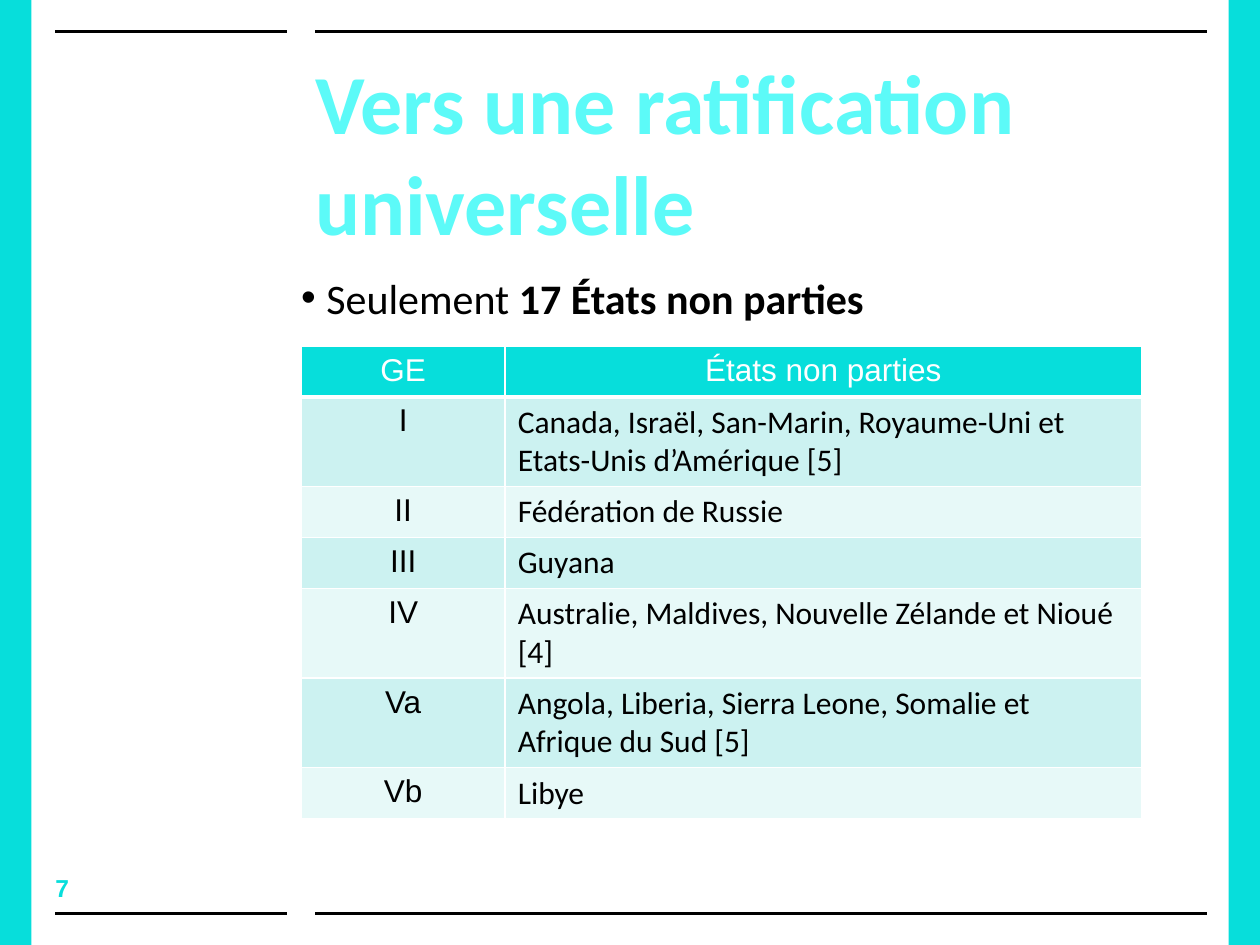
from lxml import etree
from pptx import Presentation
from pptx import util as u
from pptx.dml.color import RGBColor
from pptx.enum import shapes, text
from pptx.oxml import ns

COLS, ROWS = 40, 30  # quarter-inch grid
COLORS = {
    "band": "07DEDB", "title": "5CFAF8", "ink": "000000", "white": "FFFFFF",
    "odd": "CCF2F1", "even": "E7F9F8",
}
STATES = [
    ("I", "Canada, Israël, San-Marin, Royaume-Uni et Etats-Unis d’Amérique [5]"),
    ("II", "Fédération de Russie"),
    ("III", "Guyana"),
    ("IV", "Australie, Maldives, Nouvelle Zélande et Nioué [4]"),
    ("Va", "Angola, Liberia, Sierra Leone, Somalie et Afrique du Sud [5]"),
    ("Vb", "Libye"),
]


def rgb(name):
    return RGBColor.from_string(COLORS[name])


def sub(parent, tag, **attrs):
    return etree.SubElement(parent, ns.qn(tag), attrs)


class Deck:
    def __init__(self):
        self.prs = prs = Presentation()
        prs.slide_width, prs.slide_height = u.Inches(10), u.Inches(7.5)
        self.s = prs.slides.add_slide(prs.slide_layouts[5])

    def x(self, cols):
        return round(self.prs.slide_width * cols / COLS)

    def y(self, rows):
        return round(self.prs.slide_height * rows / ROWS)

    def box(self, left, top, width, height):
        return self.x(left), self.y(top), self.x(width), self.y(height)

    def add_runs(self, p, runs, color, name="Calibri", size=18):
        """Add (text, bold) runs to a paragraph."""
        for words, bold in runs:
            r = p.add_run()
            r.text = words
            for key, value in dict(name=name, size=u.Pt(size), bold=bold).items():
                setattr(r.font, key, value)
            r.font.color.rgb = rgb(color)

    def frame(self, sp):
        """Clear the insets of a text shape and return its first paragraph."""
        tf = sp.text_frame
        settings = dict(margin_left=0, margin_top=0, margin_right=0, margin_bottom=0,
                        word_wrap=True, auto_size=text.MSO_AUTO_SIZE.NONE,
                        vertical_anchor=text.MSO_ANCHOR.TOP)
        for key, value in settings.items():
            setattr(tf, key, value)
        tf.paragraphs[0].alignment = text.PP_ALIGN.LEFT
        return tf.paragraphs[0]

    def band(self, *place):
        sp = self.s.shapes.add_shape(shapes.MSO_SHAPE.RECTANGLE, *self.box(*place))
        sp.shadow.inherit = False
        sp.fill.solid()
        sp.fill.fore_color.rgb = rgb("band")
        sp.line.fill.background()

    def rule(self, start, end, row):
        line = self.s.shapes.add_connector(
            shapes.MSO_CONNECTOR.STRAIGHT,
            self.x(start), self.y(row), self.x(end), self.y(row))
        line.line.width = u.Pt(2)
        line.line.color.rgb = rgb("ink")
        sub(line._element.spPr, "a:effectLst")

    def title(self, words, *place):
        sp = self.s.shapes.title
        sp.left, sp.top, sp.width, sp.height = self.box(*place)
        self.add_runs(self.frame(sp), [(words, True)], "title", size=48)

    def label(self, runs, *place, bullet=False, **style):
        p = self.frame(self.s.shapes.add_textbox(*self.box(*place)))
        if bullet:
            pPr = p._p.get_or_add_pPr()
            indent = u.Inches(0.2)
            pPr.set("marL", str(indent))
            pPr.set("indent", str(-indent))
            sub(pPr, "a:buFont", typeface="Arial")
            sub(pPr, "a:buChar", char="•")
        self.add_runs(p, runs, **style)

    def borders(self, cell, top, bottom):
        tcPr = cell._tc.get_or_add_tcPr()
        for side, points in dict(L=1, R=1, T=top, B=bottom).items():
            ln = sub(tcPr, f"a:ln{side}", w=str(u.Pt(points)))
            sub(sub(ln, "a:solidFill"), "a:srgbClr", val=COLORS["white"])

    def cell(self, cell, words, fill, color, centred, name, top=1, bottom=1):
        self.borders(cell, top, bottom)
        cell.fill.solid()
        cell.fill.fore_color.rgb = rgb(fill)
        p = cell.text_frame.paragraphs[0]
        p.alignment = text.PP_ALIGN.CENTER if centred else text.PP_ALIGN.LEFT
        self.add_runs(p, [(words, False)], color, name)

    def table(self, header, rows, widths, left, top):
        heights = [1.6] + [2.8 if len(states) > 40 else 1.62 for _, states in rows]
        table = self.s.shapes.add_table(
            len(heights), len(widths),
            *self.box(left, top, sum(widths), sum(heights))).table
        for column, width in zip(table.columns, widths):
            column.width = self.x(width)
        for row, height in zip(table.rows, heights):
            row.height = self.y(height)
        for c, words in enumerate(header):
            self.cell(table.cell(0, c), words, "band", "white", True, "Arial", bottom=3)
        for i, row in enumerate(rows, 1):
            for c, words in enumerate(row):
                self.cell(table.cell(i, c), words, "odd" if i % 2 else "even", "ink",
                          c == 0, "Calibri" if c else "Arial", top=3 if i == 1 else 1)


def main():
    deck = Deck()
    for left in (0, COLS - 1):
        deck.band(left, 0, 1, ROWS)
    for row in (1, ROWS - 1):
        deck.rule(1.76, 9.12, row)
        deck.rule(10, 38.32, row)
    deck.label([("7", True)], 1.76, 27.72, 4.56, 0.96,
               color="band", name="Arial", size=14)
    deck.title("Vers une ratification universelle", 10, 1.6, 28.32, 8.6)
    deck.label([("Seulement ", False), ("17 États non parties", True)],
               9.56, 8.64, 28.36, 1.6, bullet=True, color="ink", size=24)
    deck.table(("GE", "États non parties"), STATES, (6.48, 20.2), 9.56, 11)
    deck.prs.save("out.pptx")


if __name__ == "__main__":
    main()
